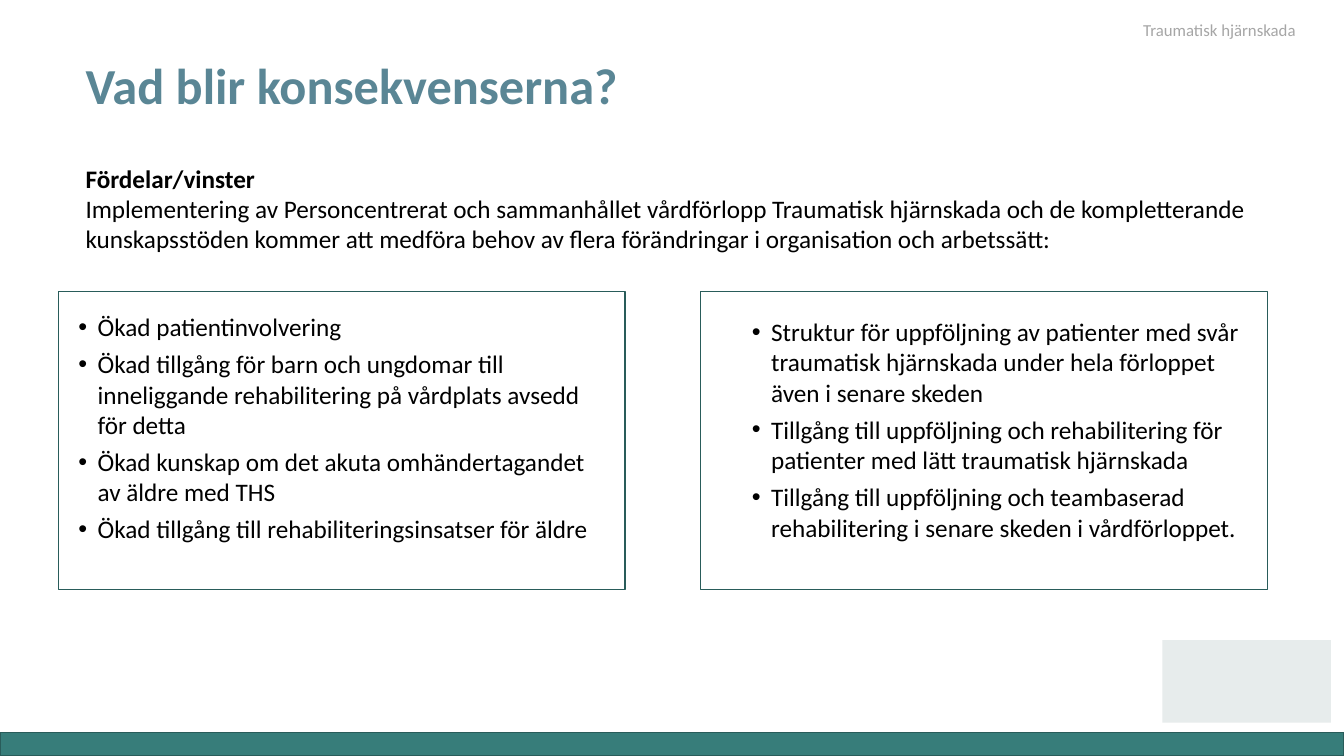
"""Build the slide on the consequences of the care pathway for traumatic brain injury."""
from lxml import etree
from pptx import Presentation
from pptx.dml.color import RGBColor
from pptx.enum.shapes import MSO_SHAPE
from pptx.enum.text import MSO_ANCHOR
from pptx.oxml.ns import qn
from pptx.util import Inches, Pt

RECT = MSO_SHAPE.RECTANGLE
TOP, BOTTOM = MSO_ANCHOR.TOP, MSO_ANCHOR.BOTTOM
TEAL = RGBColor(0x37, 0x7D, 0x7A)
DARK_TEAL = RGBColor(0x29, 0x5C, 0x5A)
BLUE = RGBColor(0x5A, 0x86, 0x95)
GREY = RGBColor(0xA6, 0xA6, 0xA6)
PALE = RGBColor(0xE7, 0xEC, 0xEC)
BLACK = RGBColor(0, 0, 0)
FONT = "Calibri"

TOPIC = "Traumatisk hjärnskada"
TITLE = "Vad blir konsekvenserna?"
INTRO_HEAD = "Fördelar/vinster"
INTRO = (
    "Implementering av Personcentrerat och sammanhållet vårdförlopp Traumatisk "
    "hjärnskada och de kompletterande kunskapsstöden kommer att medföra behov av "
    "flera förändringar i organisation och arbetssätt:"
)
CARDS = [
    {"left": 0.58, "text_at": (0.68, 3.04, 5.35, 2.73), "points": [
        "Ökad patientinvolvering",
        "Ökad tillgång för barn och ungdomar till inneliggande rehabilitering på "
        "vårdplats avsedd för detta",
        "Ökad kunskap om det akuta omhändertagandet av äldre med THS",
        "Ökad tillgång till rehabiliteringsinsatser för äldre",
    ]},
    {"left": 6.95, "text_at": (7.36, 3.09, 5.29, 2.73), "points": [
        "Struktur för uppföljning av patienter med svår traumatisk hjärnskada under "
        "hela förloppet även i senare skeden",
        "Tillgång till uppföljning och rehabilitering för patienter med lätt "
        "traumatisk hjärnskada",
        "Tillgång till uppföljning och teambaserad rehabilitering i senare skeden i "
        "vårdförloppet.",
    ]},
]
CARD_TOP, CARD_W, CARD_H = 2.89, 5.62, 2.96
INDENT = Inches(0.19)


def add_rect(s, at, fill=None, line=None):
    sp = s.shapes.add_shape(RECT, *map(Inches, at))
    sp.shadow.inherit = False
    if fill is None:
        sp.fill.background()
    else:
        sp.fill.solid()
        sp.fill.fore_color.rgb = fill
    if line is None:
        sp.line.fill.background()
    else:
        sp.line.color.rgb = line
        sp.line.width = Pt(1)


def add_bullet(p):
    pPr = p._p.get_or_add_pPr()
    pPr.set("marL", str(INDENT))
    pPr.set("indent", str(-INDENT))
    etree.SubElement(pPr, qn("a:buFont")).set("typeface", "Arial")
    etree.SubElement(pPr, qn("a:buChar")).set("char", "•")


def add_text(s, at, paragraphs, size=18, color=BLACK, bold_first=False,
             bullets=False, anchor=TOP, spacing=None):
    tf = s.shapes.add_textbox(*map(Inches, at)).text_frame
    tf.word_wrap = True
    tf.vertical_anchor = anchor
    for i, text in enumerate(paragraphs):
        p = tf.add_paragraph() if i else tf.paragraphs[0]
        if spacing:
            p.line_spacing = spacing
        if bullets:
            p.space_after = Pt(5)
            add_bullet(p)
        r = p.add_run()
        r.text = text
        r.font.name = FONT
        r.font.size = Pt(size)
        r.font.bold = bold_first and i == 0
        r.font.color.rgb = color


def main():
    prs = Presentation()
    prs.slide_width, prs.slide_height = Inches(13.33), Inches(7.5)
    s = prs.slides.add_slide(prs.slide_layouts[6])

    add_rect(s, (0, 7.27, 13.33, 0.23), fill=TEAL, line=DARK_TEAL)
    add_rect(s, (11.53, 6.35, 1.67, 0.82), fill=PALE)
    add_text(s, (0.75, 0.52, 10, 0.67), [TITLE], size=36, color=BLUE,
             bold_first=True, anchor=BOTTOM, spacing=0.9)
    add_text(s, (11.24, 0.15, 1.8, 0.3), [TOPIC], size=12, color=GREY)
    add_text(s, (0.75, 1.57, 12.41, 1.31), [INTRO_HEAD, INTRO], bold_first=True)
    for card in CARDS:
        add_rect(s, (card["left"], CARD_TOP, CARD_W, CARD_H), line=DARK_TEAL)
        add_text(s, card["text_at"], card["points"], bullets=True)

    prs.save("out.pptx")


if __name__ == "__main__":
    main()
